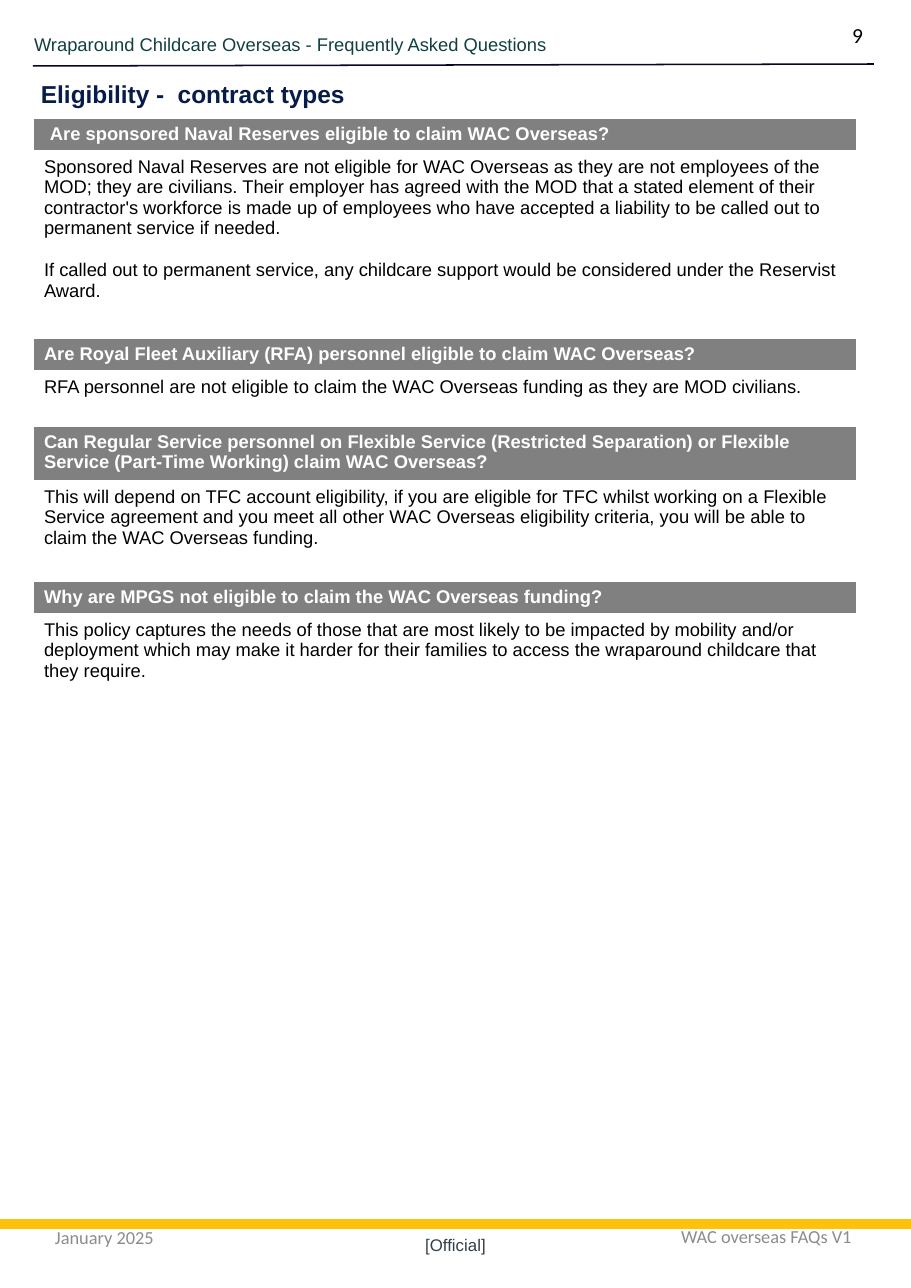
from pptx import Presentation
from pptx.dml.color import RGBColor
from pptx.enum.shapes import MSO_CONNECTOR as CONN
from pptx.enum.text import MSO_ANCHOR as ANCHOR, PP_ALIGN as ALIGN
from pptx.oxml.ns import qn
from pptx.util import Pt
from lxml import etree

PX = 8298
W, H = 911, 1288
BLACK = RGBColor(0x00, 0x00, 0x00)
WHITE = RGBColor(0xFF, 0xFF, 0xFF)
GREY = RGBColor(0x80, 0x80, 0x80)
FOOTER_GREY = RGBColor(0x8C, 0x8C, 0x8C)
SLATE = RGBColor(0x33, 0x3F, 0x47)
TEAL = RGBColor(0x11, 0x40, 0x42)
NAVY = RGBColor(0x07, 0x1D, 0x49)
INK = RGBColor(0x06, 0x06, 0x25)
YELLOW = RGBColor(0xFD, 0xC2, 0x0B)


def write(tf, *paragraphs, size=12, font="Arial", color=BLACK, bold=False,
          align=ALIGN.LEFT, gap=0):
    tf.word_wrap = True
    for i, text in enumerate(paragraphs):
        p = tf.add_paragraph() if i else tf.paragraphs[0]
        p.alignment = align
        if i:
            p.space_before = Pt(gap)
        r = p.add_run()
        r.text = text
        r.font.size = Pt(size)
        r.font.name = font
        r.font.bold = bold
        r.font.color.rgb = color


prs = Presentation()
prs.slide_width, prs.slide_height = W * PX, H * PX
s = prs.slides.add_slide(prs.slide_layouts[6])

faqs = [
    (33, "Are sponsored Naval Reserves eligible to claim WAC Overseas?",
     187, ["Sponsored Naval Reserves are not eligible for WAC Overseas as they are not "
           "employees of the MOD; they are civilians. Their employer has agreed with the "
           "MOD that a stated element of their contractor's workforce is made up of "
           "employees who have accepted a liability to be called out to permanent service "
           "if needed.",
           "If called out to permanent service, any childcare support would be considered "
           "under the Reservist Award."]),
    (33, "Are Royal Fleet Auxiliary (RFA) personnel eligible to claim WAC Overseas?",
     55, ["RFA personnel are not eligible to claim the WAC Overseas funding as they are "
          "MOD civilians."]),
    (55, "Can Regular Service personnel on Flexible Service (Restricted Separation) or "
         "Flexible Service (Part-Time Working) claim WAC Overseas?",
     100, ["This will depend on TFC account eligibility, if you are eligible for TFC whilst "
           "working on a Flexible Service agreement and you meet all other WAC Overseas "
           "eligibility criteria, you will be able to claim the WAC Overseas funding."]),
    (33, "Why are MPGS not eligible to claim the WAC Overseas funding?",
     99, ["This policy captures the needs of those that are most likely to be impacted by "
          "mobility and/or deployment which may make it harder for their families to access "
          "the wraparound childcare that they require."]),
]
height = sum(question_h + answer_h for question_h, _, answer_h, _ in faqs)
table = s.shapes.add_table(2 * len(faqs), 1, 33 * PX, 118 * PX, 824 * PX, height * PX).table
table.first_row = table.horz_banding = False
for i, (question_h, question, answer_h, answer) in enumerate(faqs):
    rows = [(question_h, [question], GREY, WHITE, True),
            (answer_h, answer, WHITE, BLACK, False)]
    for j, (row_h, texts, fill, color, bold) in enumerate(rows, 2 * i):
        table.rows[j].height = row_h * PX
        cell = table.cell(j, 0)
        cell.fill.solid()
        cell.fill.fore_color.rgb = fill
        write(cell.text_frame, *texts, color=color, bold=bold, gap=13.8)
table.cell(0, 0).margin_left = 17 * PX

for x1, y1, x2, y2, color, width in [(33, 66, 874, 64, INK, 1),
                                     (W, 1224, 0, 1224, YELLOW, 6)]:
    rule = s.shapes.add_connector(CONN.STRAIGHT, x1 * PX, y1 * PX, x2 * PX, y2 * PX)
    rule.line.color.rgb = color
    rule.line.width = Pt(width)
    etree.SubElement(rule._element.spPr, qn("a:effectLst"))

TOP, MIDDLE, BOTTOM = ANCHOR.TOP, ANCHOR.MIDDLE, ANCHOR.BOTTOM
footer = dict(font="Calibri", color=FOOTER_GREY)
labels = [
    ("Wraparound Childcare Overseas - Frequently Asked Questions",
     34, 33, 616, 44, TOP, 0, dict(color=TEAL)),
    ("Eligibility -  contract types",
     30, 74, 352, 41, TOP, 1, dict(size=16, color=NAVY, bold=True)),
    ("January 2025", 44, 1203, 213, 68, MIDDLE, 1, footer),
    ("WAC overseas FAQs V1", 622, 1202, 289, 68, MIDDLE, 1, dict(footer, align=ALIGN.CENTER)),
    ("[Official]", 0, 1234, W, 21, BOTTOM, 0, dict(size=11, color=SLATE, align=ALIGN.CENTER)),
    ("9", 801, 17, 73, 37, TOP, 1, dict(size=14, font="Calibri", align=ALIGN.RIGHT)),
]
for text, x, y, w, h, anchor, inset, style in labels:
    tf = s.shapes.add_textbox(x * PX, y * PX, w * PX, h * PX).text_frame
    tf.vertical_anchor = anchor
    tf.margin_left = tf.margin_right = inset * 11 * PX
    tf.margin_top = tf.margin_bottom = inset * 5 * PX
    write(tf, text, **style)

prs.save("out.pptx")
